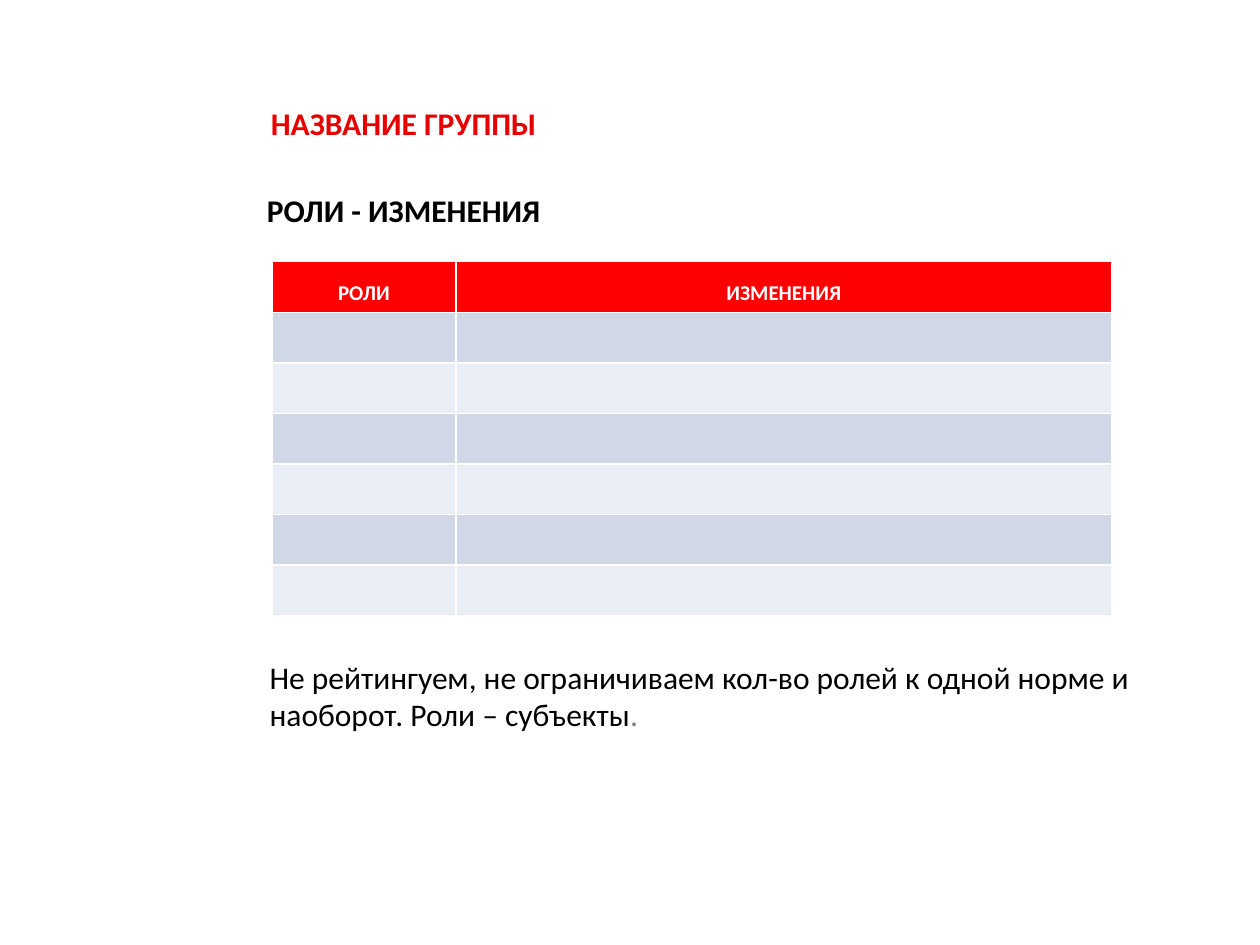
from dataclasses import dataclass

from pptx import Presentation
from pptx.dml.color import RGBColor
from pptx.enum.text import MSO_ANCHOR, MSO_AUTO_SIZE, PP_ALIGN
from pptx.util import Pt

LEFT, CENTER = PP_ALIGN.LEFT, PP_ALIGN.CENTER
MIDDLE = MSO_ANCHOR.MIDDLE
NO_FIT = MSO_AUTO_SIZE.NONE


@dataclass(frozen=True)
class Theme:
    font: str = "Calibri"
    text_size: int = 18
    header_size: int = 12
    title: str = "E60000"
    text: str = "000000"
    muted: str = "808080"
    header_text: str = "FFFFFF"
    header_fill: str = "FF0000"
    bands: tuple = ("D0D8E8", "E9EDF4")


theme = Theme()


def set_font(font, color, size=theme.text_size, bold=False):
    font.name = theme.font
    font.size = Pt(size)
    font.bold = bold
    font.color.rgb = RGBColor.from_string(color)


def fill_cell(cell, color):
    cell.fill.solid()
    cell.fill.fore_color.rgb = RGBColor.from_string(color)


prs = Presentation()
prs.slide_width, prs.slide_height = Pt(720), Pt(540)
s = prs.slides.add_slide(prs.slide_layouts[5])

# Group name
title = s.shapes.title
title.left, title.top, title.width, title.height = Pt(147.6), Pt(56.2), Pt(514.8), Pt(28)
tf = title.text_frame
tf.text = "НАЗВАНИЕ ГРУППЫ"
tf.auto_size = NO_FIT
tf.vertical_anchor = MIDDLE
p = tf.paragraphs[0]
p.alignment = LEFT
set_font(p.font, theme.title, bold=True)

# Table heading
tf = s.shapes.add_textbox(Pt(145.4), Pt(105.8), Pt(172.8), Pt(29)).text_frame
tf.word_wrap = False
p = tf.paragraphs[0]
p.text = "РОЛИ - ИЗМЕНЕНИЯ"
set_font(p.font, theme.text, bold=True)

# Roles and changes, with empty rows to fill in
headers = ["РОЛИ", "ИЗМЕНЕНИЯ"]
widths = [105.3, 374.7]
body_rows, header_height, row_height = 6, 29.5, 28.8
table = s.shapes.add_table(
    body_rows + 1, len(headers), Pt(155.3), Pt(149.2),
    Pt(sum(widths)), Pt(header_height + body_rows * row_height)).table
for column, width in zip(table.columns, widths):
    column.width = Pt(width)
for i, row in enumerate(table.rows):
    row.height = Pt(row_height if i else header_height)
    for cell in row.cells:
        fill_cell(cell, theme.bands[(i - 1) % 2] if i else theme.header_fill)
for cell, header in zip(table.rows[0].cells, headers):
    p = cell.text_frame.paragraphs[0]
    p.text = header
    p.alignment = CENTER
    p.line_spacing = 1.5
    set_font(p.font, theme.header_text, theme.header_size, bold=True)

# Note under the table
tf = s.shapes.add_textbox(Pt(147), Pt(372.2), Pt(507), Pt(51)).text_frame
tf.word_wrap = True
p = tf.paragraphs[0]
note = "Не рейтингуем, не ограничиваем кол-во ролей к одной норме и наоборот. Роли – субъекты"
for text, color in [(note, theme.text), (".", theme.muted)]:
    r = p.add_run()
    r.text = text
    set_font(r.font, color)

prs.save("out.pptx")
